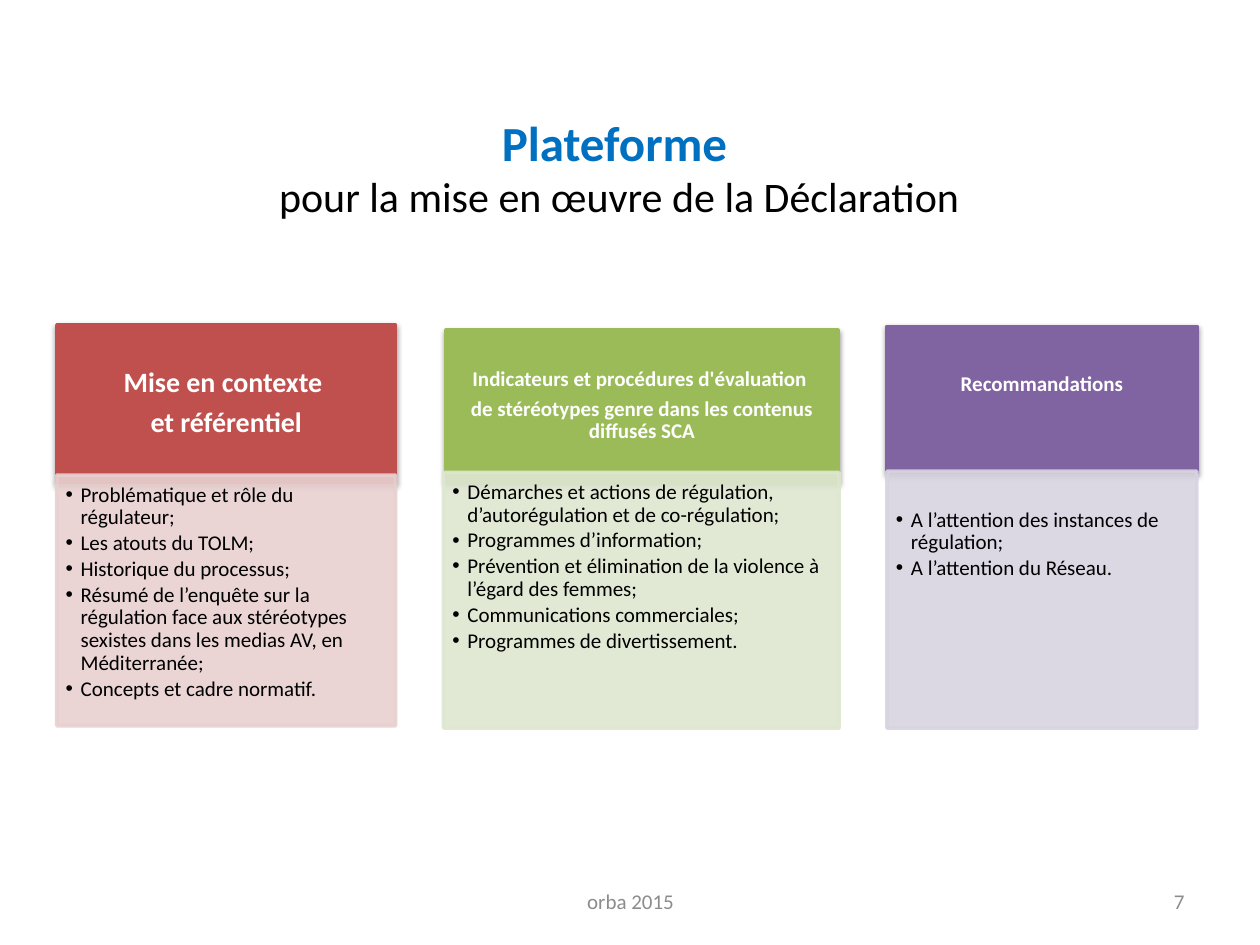
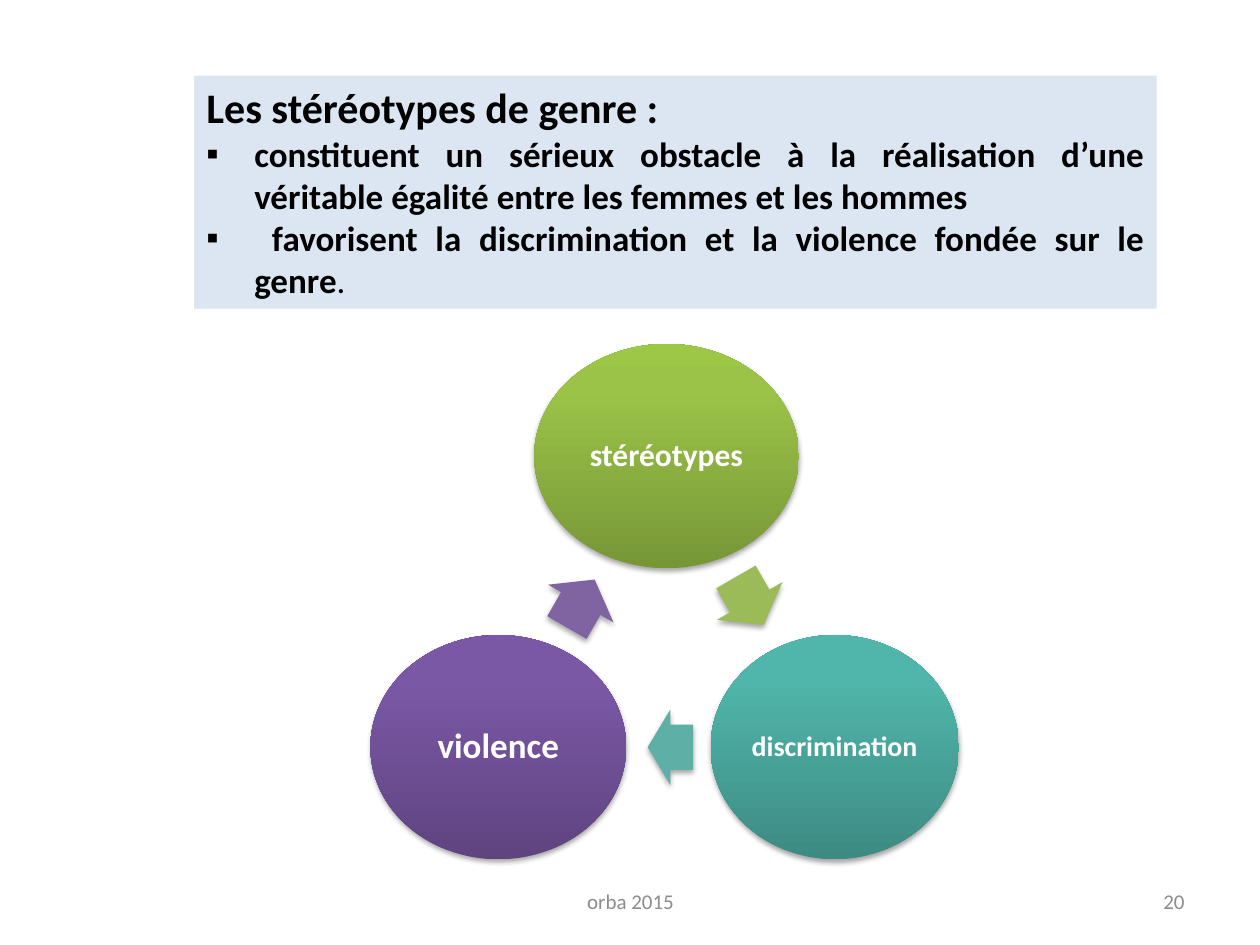
from lxml.etree import SubElement
from pptx import Presentation
from pptx.dml.color import RGBColor
from pptx.enum.shapes import MSO_SHAPE as Shape
from pptx.enum.text import MSO_ANCHOR as Anchor, PP_ALIGN as Align
from pptx.oxml.ns import qn
from pptx.util import Inches, Pt

FONT = "Calibri"
BLACK, WHITE, GREY, BLUE, PALE_BLUE = "000000", "FFFFFF", "8C8C8C", "0070C0", "DCE6F2"
RED, GREEN, PURPLE, TEAL = "C0504D", "9BBB59", "8064A2", "5EAFA6"
DEFAULT_INSETS = (0.1, 0.05, 0.1, 0.05)
BODY_INSETS = (0.07, 0.07, 0.09, 0.1)


def color(code):
    """Turn a hex string into a colour."""
    return RGBColor.from_string(code)


class Pages:
    """Holds the shared style and the slide being built."""

    def __init__(self):
        """Start an empty 4:3 deck."""
        self.deck = Presentation()
        self.deck.slide_width, self.deck.slide_height = Inches(10), Inches(7.5)
        self.page = None

    def new_page(self):
        """Add a blank slide and make it current."""
        self.page = self.deck.slides.add_slide(self.deck.slide_layouts[6])

    def footer(self, number):
        """Write the footer label and the page number."""
        for left, width, text, align in ((3.42, 3.17, "orba 2015", Align.CENTER),
                                         (7.17, 2.33, number, Align.RIGHT)):
            box = self.text_box((left, 6.95, width, 0.4), Anchor.MIDDLE)
            self.para(box, [(text, 12, GREY, False)], align)

    def text_box(self, at, anchor=Anchor.TOP):
        """Add an empty wrapping text box."""
        box = self.page.shapes.add_textbox(*map(Inches, at))
        self.frame(box, anchor, DEFAULT_INSETS)
        return box

    def frame(self, box, anchor, insets):
        """Set wrapping, anchor and insets of a text frame."""
        frame = box.text_frame
        frame.word_wrap = True
        frame.vertical_anchor = anchor
        (frame.margin_left, frame.margin_top,
         frame.margin_right, frame.margin_bottom) = map(Inches, insets)

    def para(self, box, spans, align, spacing=None, after=0, bullet=None, indent=0):
        """Write one paragraph from (text, size, colour, bold) spans."""
        frame = box.text_frame
        para = frame.paragraphs[0]
        if para.runs:
            para = frame.add_paragraph()
        para.alignment = align
        para.line_spacing = spacing
        para.space_after = Pt(after)
        for text, size, code, bold in spans:
            span = para.add_run()
            span.text = text
            span.font.name, span.font.size, span.font.bold = FONT, Pt(size), bold
            span.font.color.rgb = color(code)
        if bullet:
            properties = para._p.get_or_add_pPr()
            properties.set("marL", str(Inches(indent)))
            properties.set("indent", str(-Inches(indent)))
            SubElement(properties, qn("a:buFont")).set("typeface", "Arial")
            SubElement(properties, qn("a:buChar")).set("char", bullet)

    def shape(self, kind, at, fill, anchor=Anchor.MIDDLE, insets=DEFAULT_INSETS):
        """Add a plain filled shape without line or shadow."""
        shape = self.page.shapes.add_shape(kind, *map(Inches, at))
        shape.shadow.inherit = False
        shape.fill.solid()
        shape.fill.fore_color.rgb = color(fill)
        shape.line.fill.background()
        self.frame(shape, anchor, insets)
        return shape

    def outline(self, shape, code):
        """Give a shape a two point line."""
        shape.line.color.rgb = color(code)
        shape.line.width = Pt(2)

    def fade(self, shape, percent):
        """Make the fill and line of a shape partly transparent."""
        for code in shape._element.spPr.iter(qn("a:srgbClr")):
            SubElement(code, qn("a:alpha")).set("val", str(percent * 1000))

    def shade(self, shape, percent, distance):
        """Drop a soft shadow straight down."""
        effects = shape._element.spPr.find(qn("a:effectLst"))
        shadow = SubElement(effects, qn("a:outerShdw"), blurRad=str(Pt(3.1)),
                            dist=str(Pt(distance)), dir="5400000", rotWithShape="0")
        code = SubElement(shadow, qn("a:srgbClr"), val=BLACK)
        SubElement(code, qn("a:alpha"), val=str(percent * 1000))

    def gradient(self, shape, codes):
        """Fill a shape from bottom to top with three colours."""
        shape.fill.gradient()
        shape.fill.gradient_angle = 90
        stops = shape._element.spPr.find(qn("a:gradFill")).find(qn("a:gsLst"))
        for stop in list(stops):
            stops.remove(stop)
        for position, code in zip((0, 80, 100), codes):
            stop = SubElement(stops, qn("a:gs"), pos=str(position * 1000))
            SubElement(stop, qn("a:srgbClr"), val=code)

    def labels(self, shape, lines, size):
        """Write bold white centred lines in a shape."""
        for line in lines:
            self.para(shape, [(line, size, WHITE, True)], Align.CENTER, 0.9, size * 0.35)

    def column_head(self, at, fill, lines, size, insets):
        """Add the coloured head of a column."""
        head = self.shape(Shape.RECTANGLE, at, fill, insets=insets)
        self.outline(head, fill)
        self.shade(head, 38, 1.6)
        self.labels(head, lines, size)

    def column_body(self, at, fill, items, insets):
        """Add the pale bulleted body of a column."""
        body = self.shape(Shape.RECTANGLE, at, fill, Anchor.TOP, insets)
        self.outline(body, fill)
        self.fade(body, 90)
        for item in items:
            self.para(body, [(item, 12, BLACK, False)], Align.LEFT, 0.9, 1.8, "•", 0.12)

    def circle(self, at, codes, label, size):
        """Add a shaded circle of the cycle."""
        circle = self.shape(Shape.OVAL, at, codes[0], insets=(0.03,) * 4)
        self.gradient(circle, codes)
        self.shade(circle, 35, 1.8)
        self.labels(circle, [label], size)

    def arrow(self, at, fill, angle):
        """Add a turned block arrow of the cycle."""
        arrow = self.shape(Shape.RIGHT_ARROW, at, fill)
        arrow.adjustments[0], arrow.adjustments[1] = 0.6, 0.5
        arrow.rotation = angle
        self.shade(arrow, 35, 1.8)


def platform_page(pages):
    """Build the three column slide."""
    pages.new_page()
    columns = [
        ((0.45, 2.58, 2.69, 1.25), RED, ["Mise en contexte ", "et référentiel"], 16,
         (0.12, 0.07, 0.12, 0.07),
         (0.45, 3.77, 2.69, 1.99), "E8D0D0",
         ["Problématique et rôle du régulateur;", "Les atouts du TOLM;",
          "Historique du processus;",
          "Résumé de l’enquête sur la régulation face aux stéréotypes sexistes "
          "dans les medias AV, en Méditerranée;",
          "Concepts et cadre normatif."], BODY_INSETS),
        ((3.54, 2.62, 3.11, 1.2), GREEN,
         ["Indicateurs et procédures d'évaluation ",
          "de stéréotypes genre dans les contenus diffusés SCA"], 12,
         (0.09, 0.05, 0.09, 0.05),
         (3.52, 3.75, 3.14, 2.03), "DEE7D1",
         ["Démarches et actions de régulation, d’autorégulation et de co-régulation;",
          "Programmes d’information;",
          "Prévention et élimination de la violence à l’égard des femmes;",
          "Communications commerciales;", "Programmes de divertissement."], BODY_INSETS),
        ((7.04, 2.59, 2.46, 1.16), PURPLE, ["Recommandations"], 12,
         (0.09, 0.05, 0.09, 0.29),
         (7.04, 3.74, 2.46, 2.04), "D8D3E0",
         ["A l’attention des instances de régulation;", "A l’attention du Réseau."],
         (0.07, 0.3, 0.09, 0.1)),
    ]
    for head_at, fill, lines, size, insets, body_at, pale, items, body_insets in columns:
        pages.column_head(head_at, fill, lines, size, insets)
        pages.column_body(body_at, pale, items, body_insets)
    title = pages.text_box((0.85, 0.84, 8.13, 0.98))
    pages.para(title, [("Plateforme", 28, BLUE, True), (" ", 24, BLUE, True)], Align.CENTER)
    pages.para(title, [("pour la mise en œuvre de la Déclaration", 24, BLACK, False)],
               Align.CENTER)
    pages.footer("7")


def stereotypes_page(pages):
    """Build the cycle slide."""
    pages.new_page()
    panel = pages.shape(Shape.RECTANGLE, (1.54, 0.6, 7.64, 1.85), PALE_BLUE, Anchor.TOP)
    pages.para(panel, [("Les stéréotypes de genre :", 24, BLACK, True)], Align.JUSTIFY)
    points = [
        [("constituent un sérieux obstacle à la réalisation d’une véritable égalité "
          "entre les femmes et les hommes", 20, BLACK, True)],
        [(" favorisent la discrimination et la violence fondée sur le genre",
          20, BLACK, True), (".", 20, BLACK, False)],
    ]
    for spans in points:
        pages.para(panel, spans, Align.JUSTIFY, bullet="▪", indent=0.38)
    cycle = [
        ((4.24, 2.73, 2.1, 1.78), ("779737", "9BC348", "9DC746"), "stéréotypes", 18,
         (5.73, 4.47, 0.44, 0.6), GREEN, 60),
        ((5.64, 5.04, 1.97, 1.78), ("3D8B83", "50B5AA", "4EB8AC"), "discrimination", 16,
         (5.14, 5.63, 0.36, 0.6), TEAL, 180),
        ((2.94, 5.04, 2.03, 1.78), ("5F4480", "7B58A6", "7C57A8"), "violence", 20,
         (4.39, 4.49, 0.44, 0.6), PURPLE, 300),
    ]
    for circle_at, codes, label, size, arrow_at, fill, angle in cycle:
        pages.circle(circle_at, codes, label, size)
        pages.arrow(arrow_at, fill, angle)
    pages.footer("20")


def main():
    """Build and save the deck."""
    pages = Pages()
    platform_page(pages)
    stereotypes_page(pages)
    pages.deck.save("out.pptx")


if __name__ == "__main__":
    main()
